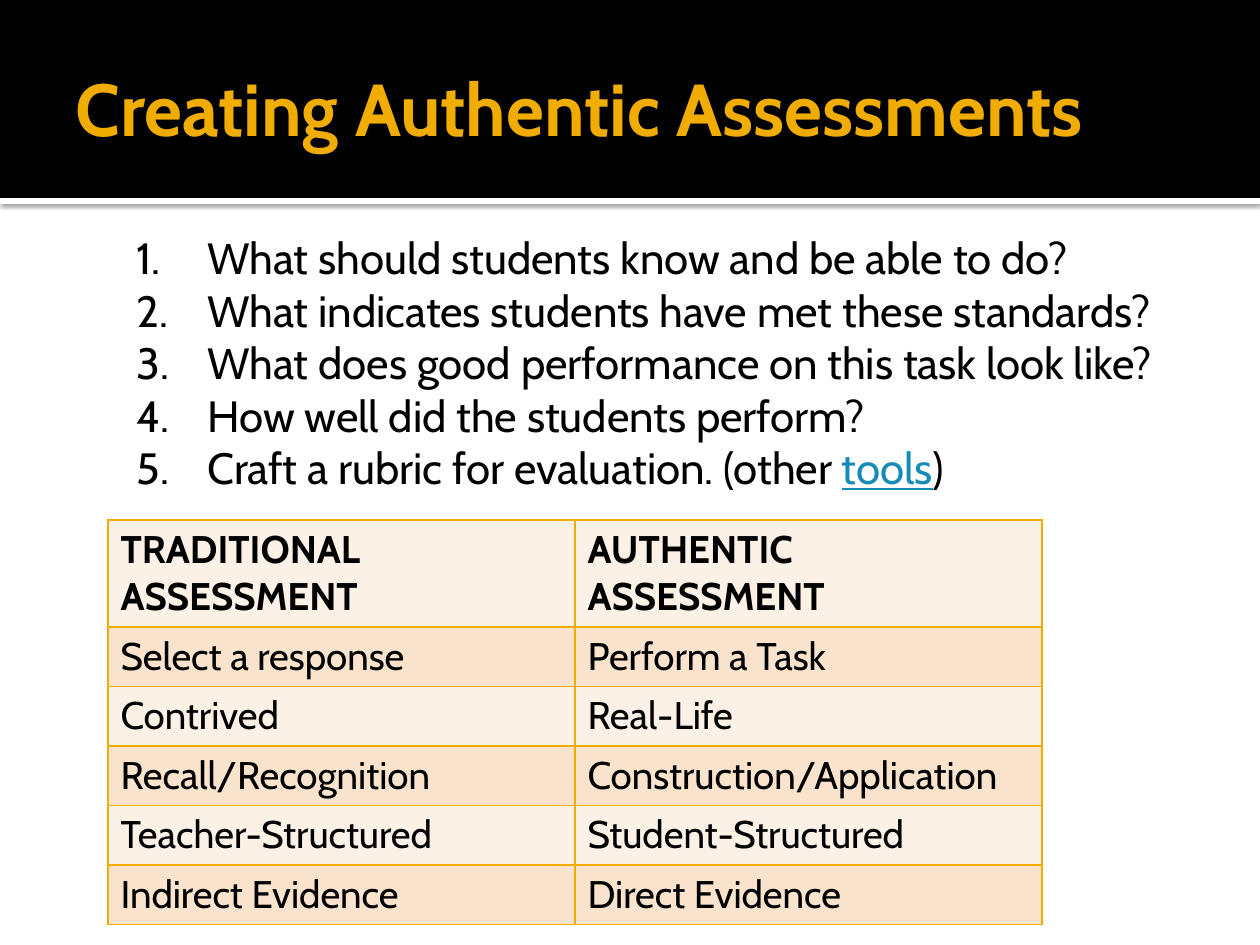
from dataclasses import dataclass

from lxml import etree
from pptx import Presentation
from pptx.dml.color import RGBColor
from pptx.enum.shapes import MSO_SHAPE
from pptx.enum.text import MSO_ANCHOR
from pptx.oxml.ns import qn
from pptx.util import Pt

RECT = MSO_SHAPE.RECTANGLE
MIDDLE = MSO_ANCHOR.MIDDLE
TOP = MSO_ANCHOR.TOP

TITLE = "Creating Authentic Assessments"
STEPS = [
    ["What should students know and be able to do?"],
    ["What indicates students have met these standards?"],
    ["What does good performance on this task look like?"],
    ["How well did the students perform?"],
    ["Craft a rubric for evaluation. (other ", ("tools",), ")"],
]
ROWS = [
    ("TRADITIONAL ASSESSMENT", "AUTHENTIC ASSESSMENT"),
    ("Select a response", "Perform a Task"),
    ("Contrived", "Real-Life"),
    ("Recall/Recognition", "Construction/Application"),
    ("Teacher-Structured", "Student-Structured"),
    ("Indirect Evidence", "Direct Evidence"),
]


@dataclass(frozen=True)
class Theme:
    font: str = "Cabin"
    gold: str = "F0AD00"
    black: str = "000000"
    white: str = "FFFFFF"
    link: str = "168BBA"
    bands: tuple = ("FCF1E7", "F9E3CC")
    title: int = 42
    step: int = 25
    cell: int = 22


THEME = Theme()
WIDTH, HEIGHT = 1260, 945
BAND = 198
STRIP = 6
LEFT = 108
COL = 467
HEAD, ROW = 107, 59.5
HANG, INDENT = 71, 87


def px(n):
    return round(n * 914400 / 126)


def box(n):
    return [px(v) for v in n]


def rgb(code):
    return RGBColor.from_string(code)


def write(par, parts, size, color=THEME.black, bold=False):
    """Add runs to a paragraph; a part held in a tuple looks like a link."""
    for part in parts:
        link = isinstance(part, tuple)
        run = par.add_run()
        run.text = part[0] if link else part
        font = run.font
        font.name, font.size, font.bold = THEME.font, Pt(size), bold
        font.color.rgb = rgb(THEME.link if link else color)
        if link:
            font.underline = True


def frame(slide, area, anchor):
    text = slide.shapes.add_textbox(*box(area)).text_frame
    text.word_wrap = True
    text.vertical_anchor = anchor
    return text


def bar(slide, area, color):
    shape = slide.shapes.add_shape(RECT, *box(area))
    shape.shadow.inherit = False
    shape.fill.solid()
    shape.fill.fore_color.rgb = rgb(color)
    shape.line.fill.background()
    return shape


def shade(shape):
    """Cast a soft shadow straight down."""
    effects = shape._element.spPr.find(qn("a:effectLst"))
    outer = etree.SubElement(
        effects, qn("a:outerShdw"), blurRad=str(Pt(2.5)), dist=str(Pt(0.8)),
        dir="5400000", algn="t", rotWithShape="0")
    color = etree.SubElement(outer, qn("a:srgbClr"), val=THEME.black)
    etree.SubElement(color, qn("a:alpha"), val="60000")


def number(par):
    props = par._p.get_or_add_pPr()
    props.set("marL", str(px(INDENT)))
    props.set("indent", str(-px(HANG)))
    etree.SubElement(props, qn("a:buFont"), typeface=THEME.font)
    etree.SubElement(props, qn("a:buAutoNum"), type="arabicPeriod")


def border(cell):
    props = cell._tc.get_or_add_tcPr()
    for at, side in enumerate(("lnL", "lnR", "lnT", "lnB")):
        line = etree.Element(qn("a:" + side), w=str(Pt(1)))
        fill = etree.SubElement(line, qn("a:solidFill"))
        etree.SubElement(fill, qn("a:srgbClr"), val=THEME.gold)
        props.insert(at, line)


def add_header(slide):
    shade(bar(slide, (0, BAND, WIDTH, STRIP), THEME.white))
    bar(slide, (0, 0, WIDTH, BAND), THEME.black)
    text = frame(slide, (63, 21, 1134, 173), MIDDLE)
    write(text.paragraphs[0], [TITLE], THEME.title, THEME.gold, bold=True)


def add_table(slide):
    high = HEAD + ROW * (len(ROWS) - 1)
    area = box((LEFT, 520, COL * 2, high))
    table = slide.shapes.add_table(len(ROWS), 2, *area).table
    for r, words in enumerate(ROWS):
        table.rows[r].height = px(ROW if r else HEAD)
        for c, word in enumerate(words):
            cell = table.cell(r, c)
            cell.fill.solid()
            cell.fill.fore_color.rgb = rgb(THEME.bands[r % 2])
            border(cell)
            write(cell.text_frame.paragraphs[0], [word], THEME.cell,
                  bold=r == 0)


def add_steps(slide):
    text = frame(slide, (LEFT, 225, 1064, 277), TOP)
    for i, parts in enumerate(STEPS):
        par = text.add_paragraph() if i else text.paragraphs[0]
        number(par)
        write(par, parts, THEME.step)


def main():
    deck = Presentation()
    deck.slide_width, deck.slide_height = px(WIDTH), px(HEIGHT)
    slide = deck.slides.add_slide(deck.slide_layouts[6])
    add_header(slide)
    add_table(slide)
    add_steps(slide)
    deck.save("out.pptx")


if __name__ == "__main__":
    main()
